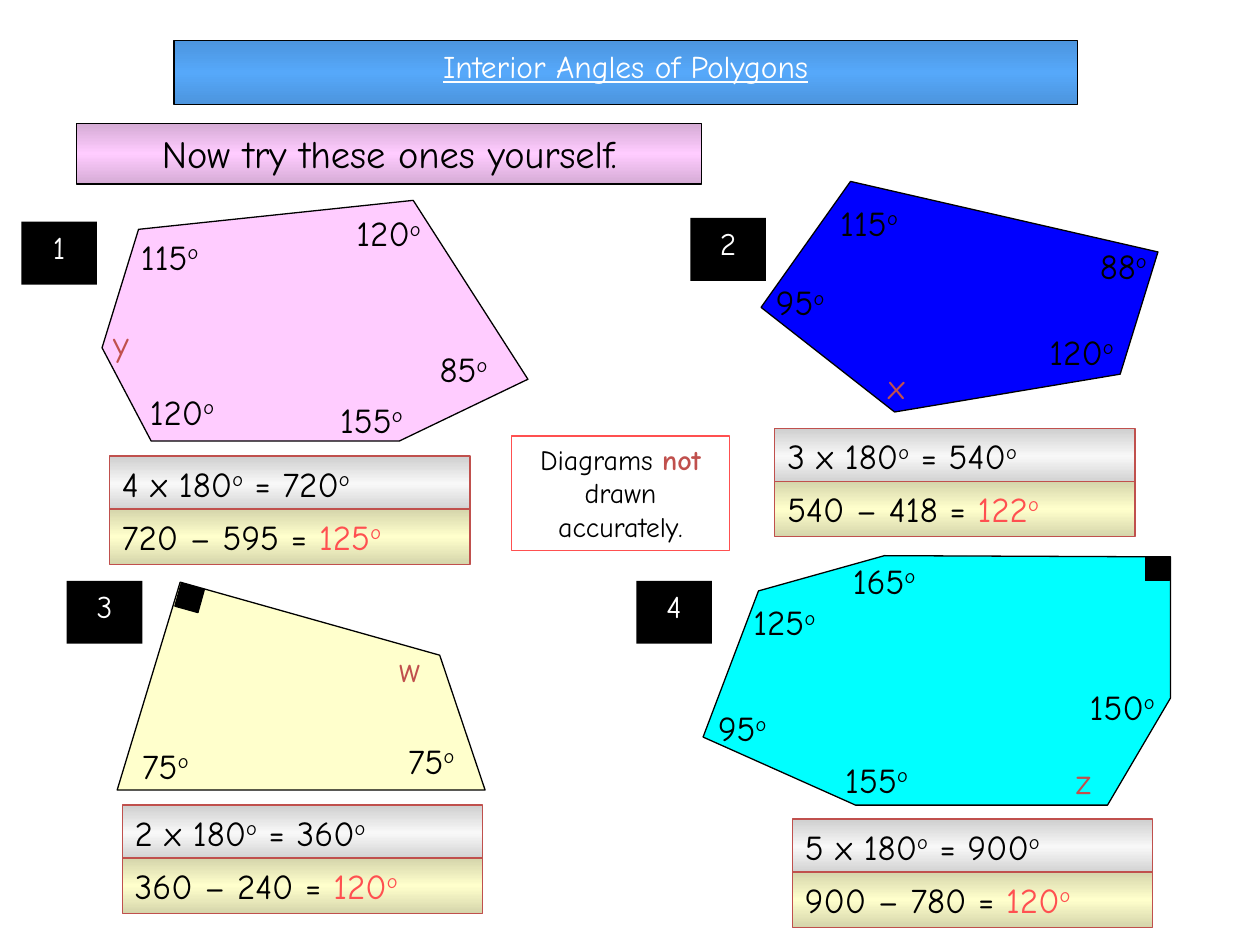
from copy import deepcopy

from pptx import Presentation
from pptx.dml.color import RGBColor
from pptx.enum.shapes import MSO_SHAPE as Shape
from pptx.enum.text import MSO_ANCHOR as Anchor, MSO_AUTO_SIZE as AutoSize, PP_ALIGN as Align
from pptx.oxml.ns import qn
from pptx.util import Inches, Pt


class Theme:
    font = "Comic Neue"
    heading, banner, label, note = 18, 22, 20, 16
    black, white, red, coral = "000000", "FFFFFF", "C0504D", "FF5050"
    pink, blue, cyan, cream = "FFCCFF", "0000FF", "00FFFF", "FFFFCC"
    # Gradients: edge colour, middle colour
    sky_bar = ("4C95DE", "56A8FA")
    pink_bar = ("D5ABD5", pink)
    silver_bar = ("CFCFCF", "F8F8F8")
    cream_bar = ("D5D5AB", cream)


def style(shape, fill=None, line=None):
    """Fill with nothing, one colour or an (edge, middle) gradient, and outline."""
    shape.shadow.inherit = False
    if fill is None:
        shape.fill.background()
    elif isinstance(fill, str):
        shape.fill.solid()
        shape.fill.fore_color.rgb = RGBColor.from_string(fill)
    else:
        edge, middle = fill
        shape.fill.gradient()
        shape.fill.gradient_angle = 90
        stop_list = shape._element.spPr.find(qn("a:gradFill")).find(qn("a:gsLst"))
        stop_list.insert(1, deepcopy(stop_list[0]))
        for stop, position, color in zip(shape.fill.gradient_stops, (0, 0.5, 1), (edge, middle, edge)):
            stop.position = position
            stop.color.rgb = RGBColor.from_string(color)
    if line:
        shape.line.color.rgb = RGBColor.from_string(line)
        shape.line.width = Pt(0.75)
    else:
        shape.line.fill.background()


def write(shape, spans, size, align=Align.LEFT):
    """Write (text, colour) spans; a span "o" is a raised degree sign."""
    frame = shape.text_frame
    frame.word_wrap = True
    frame.auto_size = AutoSize.NONE
    frame.vertical_anchor = Anchor.TOP
    para = frame.paragraphs[0]
    para.alignment = align
    for text, color in spans:
        span = para.add_run()
        span.text = text
        span.font.name = Theme.font
        span.font.size = Pt(size)
        span.font.color.rgb = RGBColor.from_string(color)
        if text == "o":
            span._r.get_or_add_rPr().set("baseline", "30000")
    return para.runs


deck = Presentation()
deck.slide_width, deck.slide_height = Inches(10), Inches(7.5)
page = deck.slides.add_slide(deck.slide_layouts[5])
shapes = page.shapes

# Headings
title = shapes.title
title.left, title.top, title.width, title.height = map(Inches, (1.38, 0.32, 7.17, 0.51))
style(title, Theme.sky_bar, Theme.black)
title_spans = write(title, [("Interior Angles of Polygons", Theme.white)], Theme.heading, Align.CENTER)
title_spans[0].font.underline = True

banner = shapes.add_shape(Shape.RECTANGLE, *map(Inches, (0.61, 0.98, 4.96, 0.48)))
style(banner, Theme.pink_bar, Theme.black)
write(banner, [("Now try these ones yourself.", Theme.black)], Theme.banner, Align.CENTER)

# Each exercise: corners, angle labels, unknown angle, number tag and worked answer
exercises = [
    dict(fill=Theme.pink, tag=(0.17, 1.76),
         corners=[(1.2, 3.5), (3.17, 3.5), (4.19, 3.01), (3.28, 1.59), (1.1, 1.82), (0.81, 2.76)],
         angles=[("120", 1.09, 3.05), ("115", 1.02, 1.82), ("85", 3.39, 2.71),
                 ("120", 2.73, 1.63), ("155", 2.6, 3.11)],
         unknown=("y", 0.8, 2.5), answer=(0.87, 3.62),
         total=("4 x 180", " = 720"), result=("720 – 595 = ", "125")),
    dict(fill=Theme.blue, tag=(5.48, 1.73),
         corners=[(7.1, 3.27), (8.89, 2.97), (9.19, 2), (6.75, 1.44), (6.04, 2.44)],
         angles=[("120", 8.23, 2.57), ("115", 6.57, 1.55), ("95", 6.06, 2.18), ("88", 8.63, 1.89)],
         unknown=("x", 6.95, 2.84), answer=(6.15, 3.4),
         total=("3 x 180", " = 540"), result=("540 – 418 = ", "122")),
    dict(fill=Theme.cream, tag=(0.53, 4.61),
         corners=[(0.93, 6.27), (3.85, 6.27), (3.49, 5.2), (1.43, 4.62)],
         angles=[("75", 3.14, 5.82), ("75", 1.03, 5.86)],
         unknown=("w", 3.07, 5.09), answer=(0.97, 6.39),
         total=("2 x 180", " = 360"), result=("360 – 240 = ", "120")),
    dict(fill=Theme.cyan, tag=(5.05, 4.61),
         corners=[(6.79, 6.39), (8.79, 6.39), (9.29, 5.54), (9.29, 4.42), (7.02, 4.41),
                  (6.02, 4.69), (5.58, 5.85)],
         angles=[("155", 6.61, 5.97), ("95", 5.6, 5.56), ("125", 5.88, 4.72),
                 ("165", 6.67, 4.39), ("150", 8.55, 5.39)],
         unknown=("z", 8.44, 5.98), answer=(6.29, 6.5),
         total=("5 x 180", " = 900"), result=("900 – 780 = ", "120")),
]

for number, exercise in enumerate(exercises, start=1):
    start, *others = [(Inches(x), Inches(y)) for x, y in exercise["corners"]]
    outline = shapes.build_freeform(*start)
    outline.add_line_segments(others, close=True)
    style(outline.convert_to_shape(), exercise["fill"], Theme.black)

    for degrees, x, y in exercise["angles"]:
        label = shapes.add_textbox(*map(Inches, (x, y, 0.92, 0.43)))
        write(label, [(degrees, Theme.black), ("o", Theme.black)], Theme.label)
    letter, x, y = exercise["unknown"]
    label = shapes.add_textbox(*map(Inches, (x, y, 0.54, 0.43)))
    write(label, [(letter, Theme.red)], Theme.label)

    tag = shapes.add_shape(Shape.RECTANGLE, *map(Inches, (*exercise["tag"], 0.6, 0.5)))
    style(tag, Theme.black)
    write(tag, [(str(number), Theme.white)], Theme.heading, Align.CENTER)

    product, total = exercise["total"]
    subtraction, angle = exercise["result"]
    x, y = exercise["answer"]
    rows = [
        (Theme.silver_bar, [(product, Theme.black), ("o", Theme.black), (total, Theme.black), ("o", Theme.black)]),
        (Theme.cream_bar, [(subtraction, Theme.black), (angle, Theme.coral), ("o", Theme.coral)]),
    ]
    for row, (gradient, spans) in enumerate(rows):
        box = shapes.add_shape(Shape.RECTANGLE, *map(Inches, (x, y + 0.42 * row, 2.86, 0.44)))
        style(box, gradient, Theme.red)
        write(box, spans, Theme.label)

# Right-angle markers
for x, y, turn in [(9.09, 4.42, 0), (1.41, 4.65, 15.6)]:
    marker = shapes.add_shape(Shape.RECTANGLE, *map(Inches, (x, y, 0.19, 0.19)))
    marker.rotation = turn
    style(marker, Theme.black, Theme.black)

note = shapes.add_shape(Shape.RECTANGLE, *map(Inches, (4.06, 3.46, 1.73, 0.91)))
style(note, line=Theme.coral)
note_spans = write(note, [("Diagrams ", Theme.black), ("not ", Theme.red), ("drawn accurately.", Theme.black)],
                   Theme.note, Align.CENTER)
note_spans[1].font.bold = True

deck.save("out.pptx")
